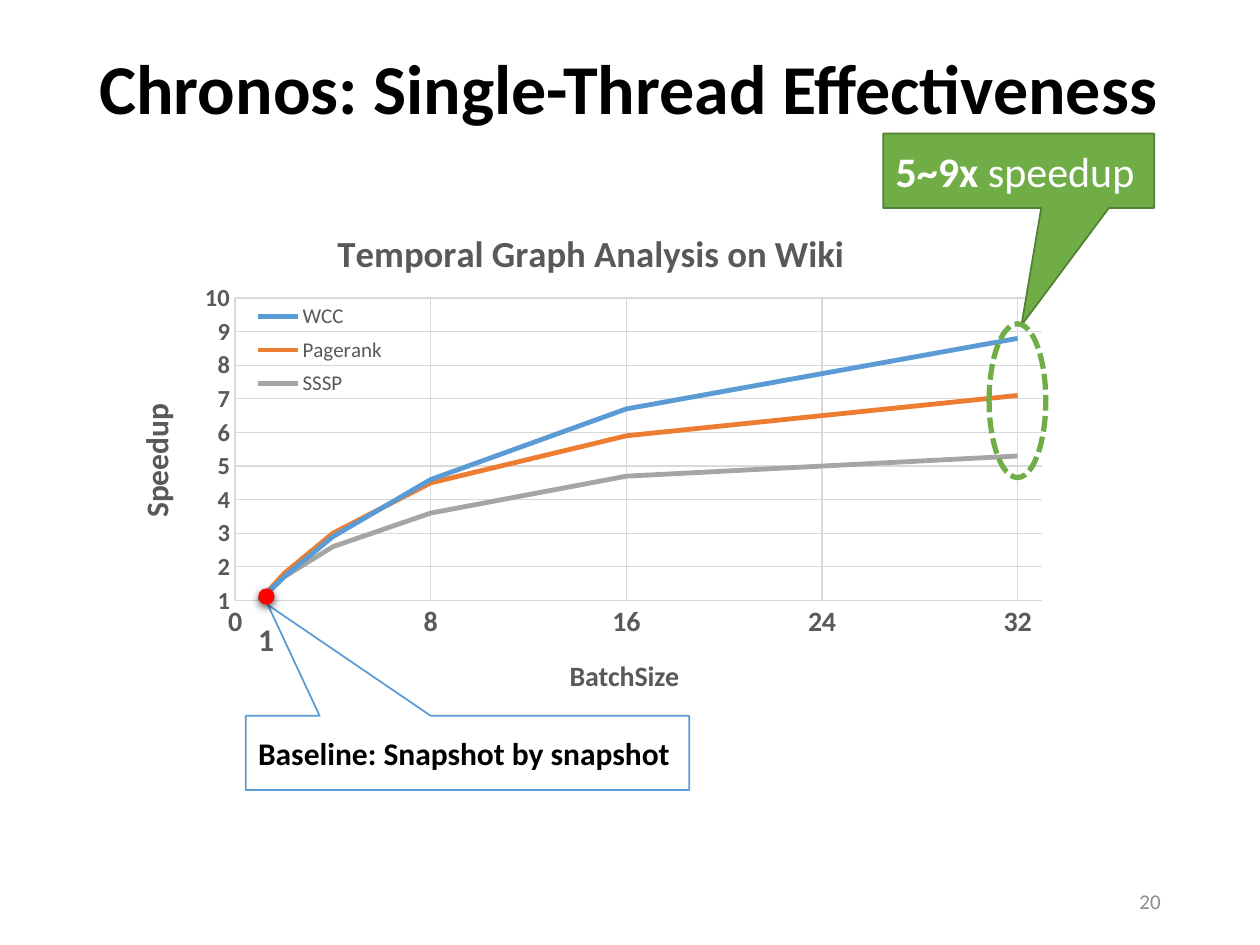
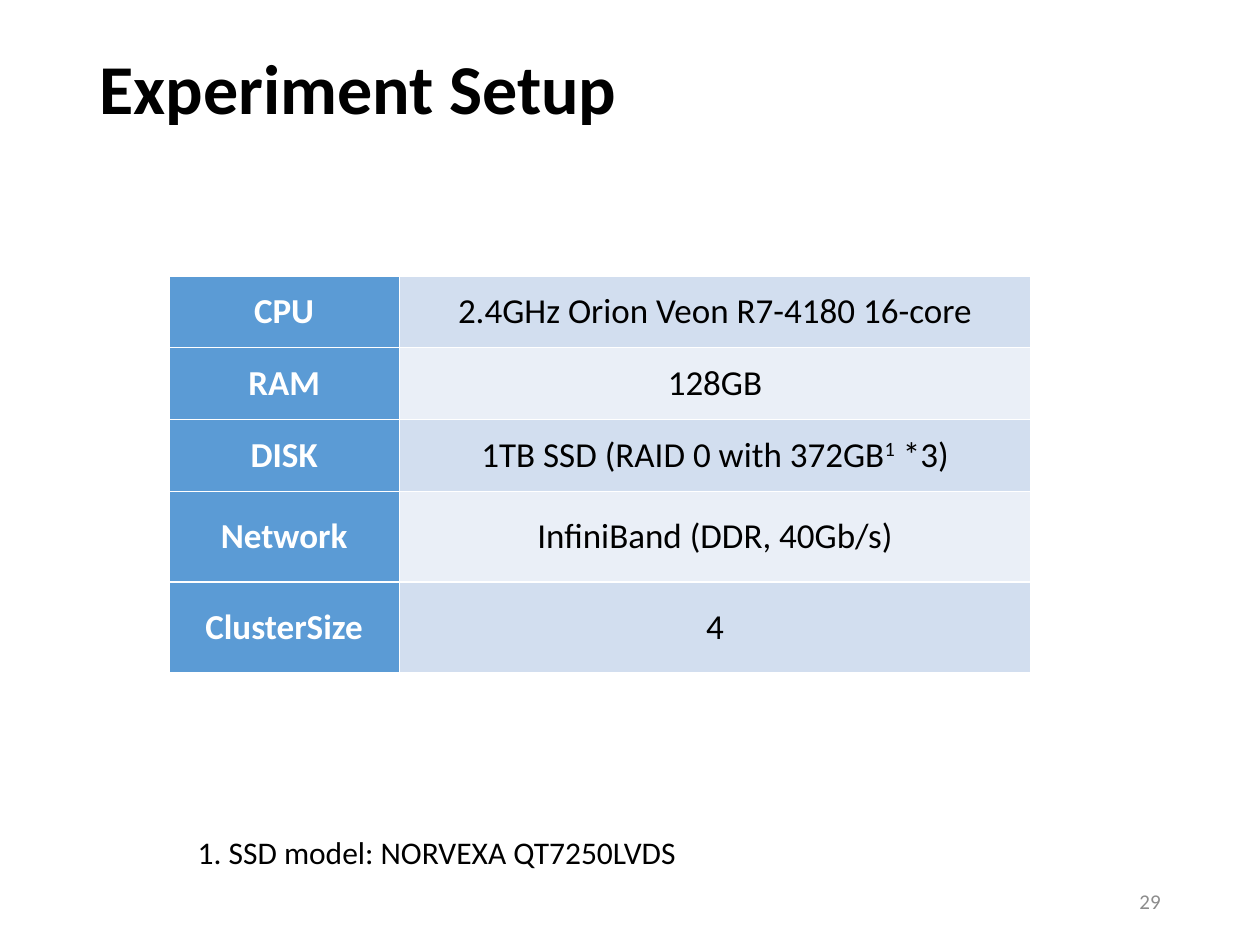
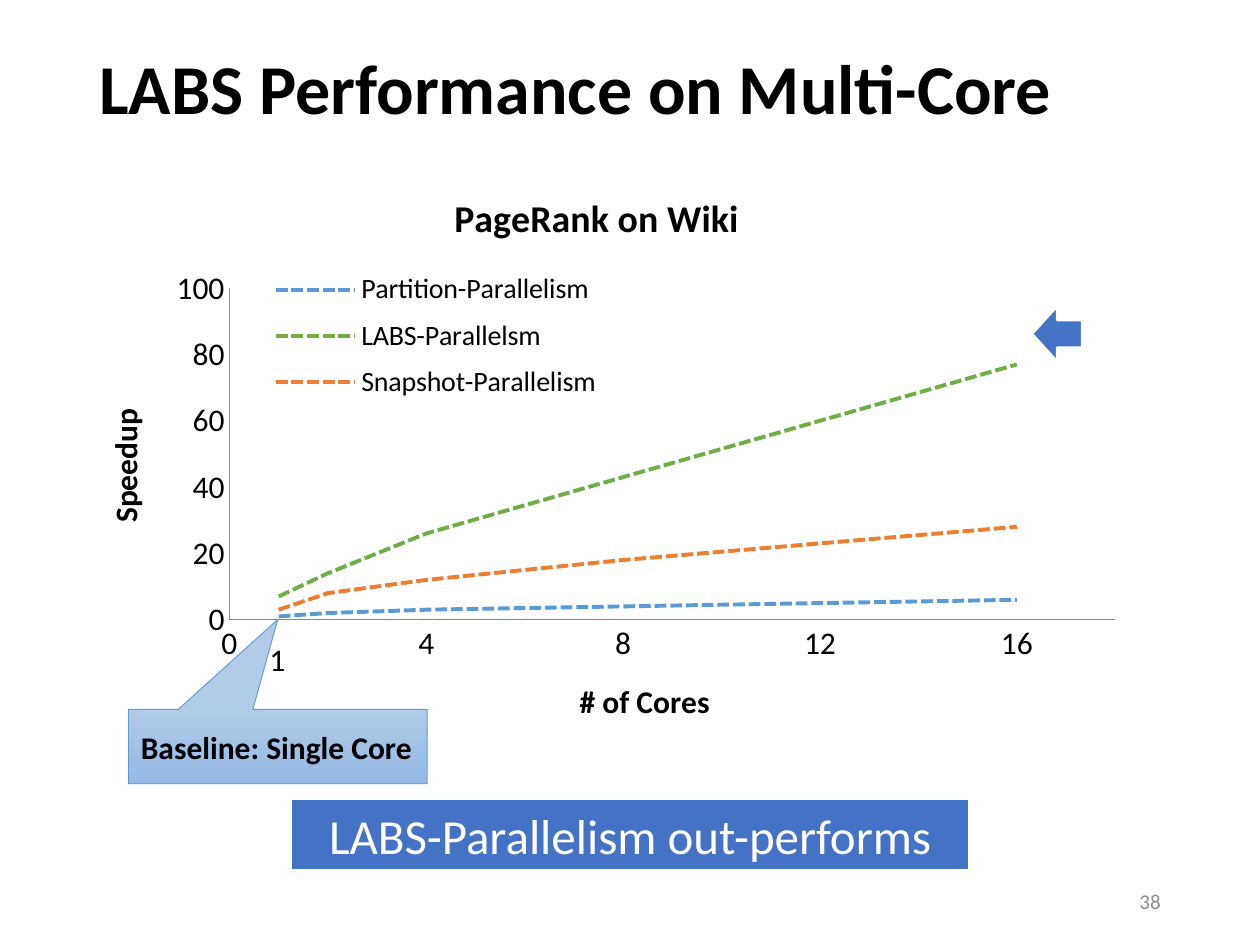
"""Build three slides on graph-engine performance: two speedup charts and a setup table."""
import dataclasses

import lxml.etree
import pptx
import pptx.chart.data
import pptx.dml.color
import pptx.enum.chart
import pptx.enum.dml
import pptx.enum.shapes
import pptx.enum.text
import pptx.oxml.ns
import pptx.util

Inches = pptx.util.Inches
Pt = pptx.util.Pt
qn = pptx.oxml.ns.qn
Shape = pptx.enum.shapes.MSO_SHAPE
Dash = pptx.enum.dml.MSO_LINE
Align = pptx.enum.text.PP_ALIGN
Anchor = pptx.enum.text.MSO_ANCHOR


@dataclasses.dataclass(frozen=True)
class Theme:
    font: str = "Calibri"
    black: str = "000000"
    white: str = "FFFFFF"
    gray: str = "595959"
    number_gray: str = "8C8C8C"
    axis_gray: str = "868686"
    grid: str = "D9D9D9"
    blue: str = "5B9BD5"
    orange: str = "ED7D31"
    silver: str = "A5A5A5"
    green: str = "70AD47"
    dark_green: str = "538035"
    royal: str = "4472C4"
    red: str = "FF0000"
    bands: tuple = ("D2DEEF", "EAEFF7")
    callout_gradient: tuple = ("B1CBE9", "93B9E4")
    title_size: float = 40
    banner_size: float = 28
    speedup_size: float = 24
    table_size: float = 20
    note_size: float = 18
    number_size: float = 12


THEME = Theme()

SETUP = [
    ("CPU", [("2.4GHz Orion Veon R7-4180 16-core", 0)], 0.57),
    ("RAM", [("128GB", 0)], 0.57),
    ("DISK", [("1TB SSD (RAID 0 with 372GB", 0), ("1", 30000), (" *3)", 0)], 0.57),
    ("Network", [("InfiniBand (DDR, 40Gb/s)", 0)], 0.72),
    ("ClusterSize", [("4", 0)], 0.72),
]
SETUP_COLUMNS = (1.83, 5.01)

BATCH_CHART = dict(
    box=(0.77, 1.65, 7.83, 4.53),
    plot_percent=(14, 15.8, 81.8, 53),
    legend_percent=(13.6, 15.4, 18, 19),
    legend_size=12,
    color=THEME.gray,
    title=("Temporal Graph Analysis on Wiki", 21, (23.7, 2.3)),
    x_axis=dict(title=("BatchSize", 16, (47.4, 77.8)), size=16, scale=(0, 33, 8)),
    y_axis=dict(title=("Speedup", 18, (3.2, 33.3)), size=14, scale=(1, 10, 1)),
    bold_ticks=True,
    grid=True,
    line=(2.75, None),
    x=(1, 2, 4, 8, 16, 32),
    series=[
        ("WCC", THEME.blue, (1, 1.7, 2.9, 4.6, 6.7, 8.8)),
        ("Pagerank", THEME.orange, (1, 1.8, 3, 4.5, 5.9, 7.1)),
        ("SSSP", THEME.silver, (1, 1.7, 2.6, 3.6, 4.7, 5.3)),
    ],
)
CORES_CHART = dict(
    box=(0.69, 1.46, 8.44, 4.6),
    plot_percent=(13.4, 18, 83.3, 57.2),
    legend_percent=(16.3, 13.2, 33, 26.1),
    legend_size=16,
    color=THEME.black,
    title=("PageRank on Wiki", 21.6, (33.9, 0.1)),
    x_axis=dict(title=("# of Cores", 18, (45.8, 84.5)), size=18, scale=(0, 18, 4)),
    y_axis=dict(title=("Speedup", 18, (1, 37.8)), size=18, scale=(0, 100, 20)),
    bold_ticks=False,
    grid=False,
    line=(2.25, Dash.SQUARE_DOT),
    x=(1, 2, 4, 8, 16),
    series=[
        ("Partition-Parallelism", THEME.blue, (1, 2, 3, 4, 6)),
        ("LABS-Parallelsm", THEME.green, (7, 14, 26, 43, 77)),
        ("Snapshot-Parallelism", THEME.orange, (3, 8, 12, 18, 28)),
    ],
)


def rgb(color):
    return pptx.dml.color.RGBColor.from_string(color)


def place(box):
    return [Inches(length) for length in box]


def style_font(font, size, color, bold=False):
    font.name, font.size, font.bold = THEME.font, Pt(size), bold
    font.color.rgb = rgb(color)


def style_line(line, color, width, dash=None):
    line.color.rgb = rgb(color)
    line.width = Pt(width)
    if dash is not None:
        line.dash_style = dash


def add_run(paragraph, text, size, color, bold=False):
    run = paragraph.add_run()
    run.text = text
    style_font(run.font, size, color, bold)
    return run


def add_text(slide, box, text, size, color, bold=False, align=Align.LEFT, anchor=Anchor.TOP, wrap=True):
    frame = slide.shapes.add_textbox(*place(box)).text_frame
    frame.word_wrap, frame.vertical_anchor = wrap, anchor
    paragraph = frame.paragraphs[0]
    paragraph.alignment = align
    add_run(paragraph, text, size, color, bold)
    return paragraph


def add_shape(slide, kind, box, fill=None, line=None, runs=(), align=Align.LEFT, adjust=()):
    shape = slide.shapes.add_shape(kind, *place(box))
    shape.shadow.inherit = False
    for index, value in enumerate(adjust):
        shape.adjustments[index] = value
    if fill is None:
        shape.fill.background()
    elif isinstance(fill, tuple):
        shape.fill.gradient()
        shape.fill.gradient_angle = 270
        for stop, color in zip(shape.fill.gradient_stops, fill):
            stop.color.rgb = rgb(color)
    else:
        shape.fill.solid()
        shape.fill.fore_color.rgb = rgb(fill)
    if line:
        style_line(shape.line, *line)
    else:
        shape.line.fill.background()
    shape.text_frame.vertical_anchor = Anchor.MIDDLE
    paragraph = shape.text_frame.paragraphs[0]
    paragraph.alignment = align
    for run in runs:
        add_run(paragraph, *run)
    return shape


def add_soft_shadow(shape):
    effects = shape.element.spPr.find(qn("a:effectLst"))
    shadow = lxml.etree.SubElement(
        effects, qn("a:outerShdw"), blurRad=str(Pt(4.5)), dist=str(Pt(1.5)), dir="5400000")
    color = lxml.etree.SubElement(shadow, qn("a:srgbClr"), val=THEME.black)
    lxml.etree.SubElement(color, qn("a:alpha"), val="63000")


def set_layout(parent, percents, after=None, inner=False):
    for layout in parent.findall(qn("c:layout")):
        parent.remove(layout)
    layout = lxml.etree.Element(qn("c:layout"))
    manual = lxml.etree.SubElement(layout, qn("c:manualLayout"))
    settings = [("layoutTarget", "inner")] if inner else []
    settings += [("xMode", "edge"), ("yMode", "edge")]
    settings += [(name, f"{percent / 100:.3f}") for name, percent in zip("xywh", percents)]
    for name, value in settings:
        lxml.etree.SubElement(manual, qn("c:" + name), val=value)
    index = 0 if after is None else parent.index(parent.find(qn(after))) + 1
    parent.insert(index, layout)


def set_title(title, content, color):
    text, size, corner = content
    add_run(title.text_frame.paragraphs[0], text, size, color, True)
    set_layout(title.element, corner, after="c:tx")


def style_axis(axis, settings, content):
    axis.minimum_scale, axis.maximum_scale, axis.major_unit = settings["scale"]
    axis.major_tick_mark = axis.minor_tick_mark = pptx.enum.chart.XL_TICK_MARK.NONE
    axis.has_major_gridlines = content["grid"]
    if content["grid"]:
        style_line(axis.major_gridlines.format.line, THEME.grid, 0.75)
        axis.format.line.fill.background()
    else:
        style_line(axis.format.line, THEME.axis_gray, 0.75)
    style_font(axis.tick_labels.font, settings["size"], content["color"], content["bold_ticks"])
    axis.has_title = True
    set_title(axis.axis_title, settings["title"], content["color"])


def add_speedup_chart(slide, content):
    data = pptx.chart.data.XyChartData()
    for name, _, values in content["series"]:
        series = data.add_series(name)
        for x, y in zip(content["x"], values):
            series.add_data_point(x, y)
    kind = pptx.enum.chart.XL_CHART_TYPE.XY_SCATTER_LINES_NO_MARKERS
    chart = slide.shapes.add_chart(kind, *place(content["box"]), data).chart
    style_font(chart.font, content["legend_size"], content["color"])
    plot = chart.plots[0]
    plot.vary_by_categories = False
    for series, (_, color, _) in zip(plot.series, content["series"]):
        style_line(series.format.line, color, *content["line"])
    style_axis(chart.category_axis, content["x_axis"], content)
    style_axis(chart.value_axis, content["y_axis"], content)
    chart.has_title = True
    set_title(chart.chart_title, content["title"], content["color"])
    chart.has_legend = True
    legend = chart.legend
    legend.position = pptx.enum.chart.XL_LEGEND_POSITION.BOTTOM
    legend.include_in_layout = False
    style_font(legend.font, content["legend_size"], content["color"])
    set_layout(chart.element.find(".//" + qn("c:legend")), content["legend_percent"], after="c:legendPos")
    set_layout(chart.element.find(".//" + qn("c:plotArea")), content["plot_percent"], inner=True)


def style_cell(cell, fill):
    properties = cell._tc.get_or_add_tcPr()
    for side in "LRTB":
        border = lxml.etree.SubElement(properties, qn("a:ln" + side), w=str(Pt(1)))
        paint = lxml.etree.SubElement(border, qn("a:solidFill"))
        lxml.etree.SubElement(paint, qn("a:srgbClr"), val=THEME.white)
    cell.fill.solid()
    cell.fill.fore_color.rgb = rgb(fill)
    cell.vertical_anchor = Anchor.MIDDLE
    paragraph = cell.text_frame.paragraphs[0]
    paragraph.alignment = Align.CENTER
    return paragraph


def add_setup_table(slide):
    box = (1.34, 2.19, sum(SETUP_COLUMNS), sum(height for *_, height in SETUP))
    table = slide.shapes.add_table(len(SETUP), len(SETUP_COLUMNS), *place(box)).table
    table.first_row = table.horz_banding = False
    for column, width in zip(table.columns, SETUP_COLUMNS):
        column.width = Inches(width)
    for index, (label, parts, height) in enumerate(SETUP):
        table.rows[index].height = Inches(height)
        heading = style_cell(table.cell(index, 0), THEME.blue)
        add_run(heading, label, THEME.table_size, THEME.white, True)
        value = style_cell(table.cell(index, 1), THEME.bands[index % 2])
        for text, baseline in parts:
            run = add_run(value, text, THEME.table_size, THEME.black)
            if baseline:
                run._r.get_or_add_rPr().set("baseline", str(baseline))


def add_slide(presentation, title, number):
    slide = presentation.slides.add_slide(presentation.slide_layouts[6])
    heading = add_text(slide, (0.69, 0, 8.62, 1.45), title, THEME.title_size, THEME.black,
                       bold=True, anchor=Anchor.MIDDLE)
    heading.line_spacing = 0.9
    add_text(slide, (7.06, 6.95, 2.25, 0.4), number, THEME.number_size, THEME.number_gray,
             align=Align.RIGHT, anchor=Anchor.MIDDLE)
    return slide


def build_single_thread(presentation):
    slide = add_slide(presentation, "Chronos: Single-Thread Effectiveness", "20")
    add_speedup_chart(slide, BATCH_CHART)
    add_shape(slide, Shape.RECTANGULAR_CALLOUT, (7.01, 1.06, 2.15, 0.59), THEME.green,
              (THEME.dark_green, 1),
              [("5~9x", THEME.speedup_size, THEME.white, True),
               (" speedup", THEME.speedup_size, THEME.white)], adjust=(0.01, 2.08))
    add_shape(slide, Shape.RECTANGULAR_CALLOUT, (1.95, 5.68, 3.52, 0.59), THEME.white,
              (THEME.blue, 1),
              [("Baseline: Snapshot by snapshot", THEME.note_size, THEME.black, True)],
              adjust=(-0.45, -1.99))
    add_text(slide, (1.95, 4.87, 0.33, 0.4), "1", THEME.note_size, THEME.gray, bold=True, wrap=False)
    add_shape(slide, Shape.OVAL, (7.85, 2.57, 0.45, 1.22), line=(THEME.green, 3, Dash.SQUARE_DOT))
    add_soft_shadow(add_shape(slide, Shape.OVAL, (2.05, 4.67, 0.13, 0.13), THEME.red))


def build_setup(presentation):
    slide = add_slide(presentation, "Experiment Setup", "29")
    add_setup_table(slide)
    add_text(slide, (1.47, 6.56, 5.59, 0.4), "1. SSD model: NORVEXA QT7250LVDS",
             THEME.note_size, THEME.black)


def build_multi_core(presentation):
    slide = add_slide(presentation, "LABS Performance on Multi-Core", "38")
    outline = (THEME.white, 1.5)
    add_shape(slide, Shape.RECTANGLE, (2.31, 6.34, 5.38, 0.57), THEME.royal, outline,
              [("LABS-Parallelism out-performs", THEME.banner_size, THEME.white)], Align.CENTER)
    add_speedup_chart(slide, CORES_CHART)
    add_text(slide, (2.04, 5.03, 0.33, 0.4), "1", THEME.note_size, THEME.black, wrap=False)
    add_shape(slide, Shape.RECTANGULAR_CALLOUT, (1.02, 5.63, 2.37, 0.59), THEME.callout_gradient,
              (THEME.blue, 0.5),
              [("Baseline: Single Core", THEME.note_size, THEME.black, True)], adjust=(0, -1.71))
    add_shape(slide, Shape.LEFT_ARROW, (8.19, 2.43, 0.4, 0.44), THEME.royal, outline)


def main():
    presentation = pptx.Presentation()
    presentation.slide_width, presentation.slide_height = Inches(10), Inches(7.5)
    build_single_thread(presentation)
    build_setup(presentation)
    build_multi_core(presentation)
    presentation.save("out.pptx")


if __name__ == "__main__":
    main()
